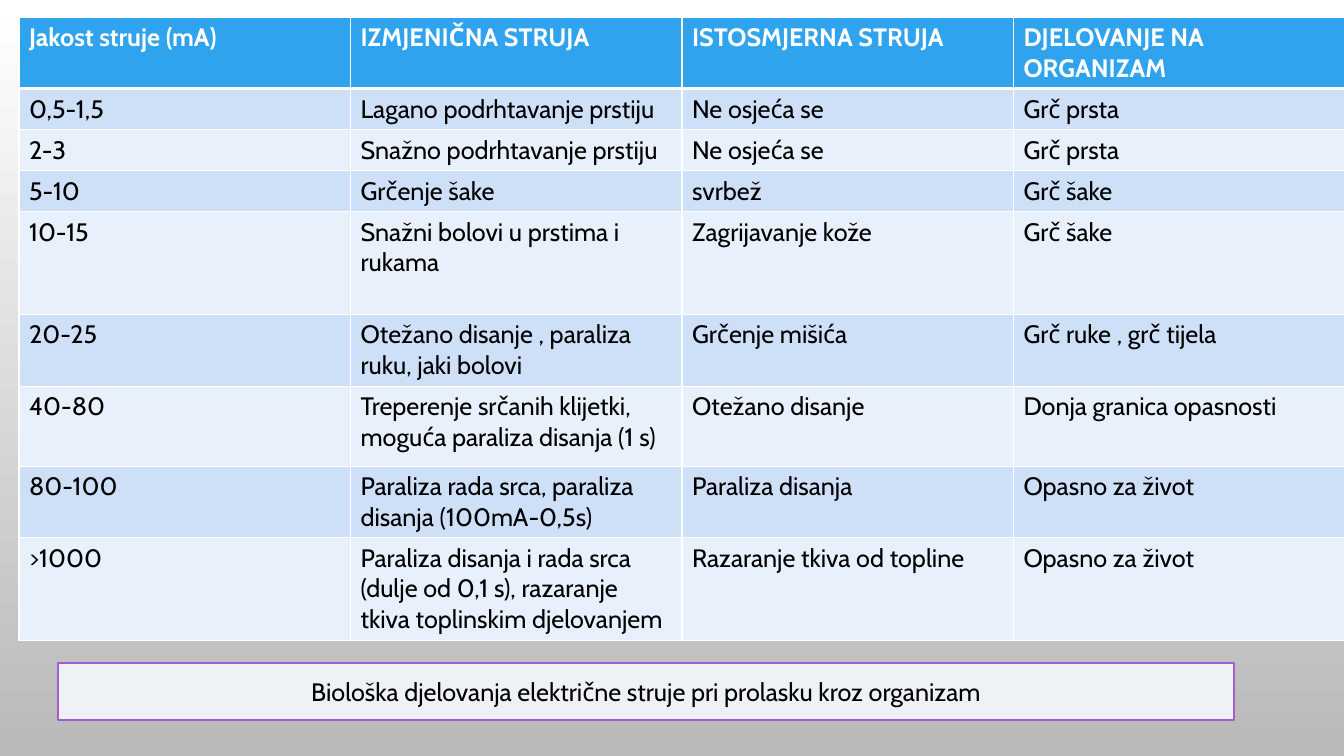
from lxml import etree
from pptx import Presentation
from pptx.dml.color import RGBColor
from pptx.enum.shapes import MSO_SHAPE
from pptx.enum.text import MSO_ANCHOR, PP_ALIGN
from pptx.oxml.ns import qn
from pptx.util import Pt

RECTANGLE = MSO_SHAPE.RECTANGLE
MIDDLE = MSO_ANCHOR.MIDDLE
CENTER = PP_ALIGN.CENTER

PX_PER_INCH = 100.8
FONT = "Cabin"
TEXT_PT = 18
COLORS = {
    "white": "FFFFFF",
    "grey": "B9B9B9",
    "header": "2FA3EE",
    "odd_row": "CDE0F8",
    "even_row": "E8F0FC",
    "caption": "EEF2F7",
    "outline": "A35DD1",
    "text": "000000",
}

HEADINGS = ("Jakost struje (mA)", "IZMJENIČNA STRUJA", "ISTOSMJERNA STRUJA",
            "DJELOVANJE NA ORGANIZAM")
EFFECTS = [
    ("0,5-1,5", "Lagano podrhtavanje prstiju", "Ne osjeća se", "Grč prsta"),
    ("2-3", "Snažno podrhtavanje prstiju", "Ne osjeća se", "Grč prsta"),
    ("5-10", "Grčenje šake", "svrbež", "Grč šake"),
    ("10-15", "Snažni bolovi u prstima i rukama", "Zagrijavanje kože", "Grč šake"),
    ("20-25", "Otežano disanje , paraliza ruku, jaki bolovi", "Grčenje mišića",
     "Grč ruke , grč tijela"),
    ("40-80", "Treperenje srčanih klijetki, moguća paraliza disanja (1 s)",
     "Otežano disanje", "Donja granica opasnosti"),
    ("80-100", "Paraliza rada srca, paraliza disanja (100mA-0,5s)",
     "Paraliza disanja", "Opasno za život"),
    (">1000", "Paraliza disanja i rada srca (dulje od 0,1 s), razaranje tkiva "
     "toplinskim djelovanjem", "Razaranje tkiva od topline", "Opasno za život"),
]
ROW_HEIGHTS = (70, 41, 41, 41, 103, 71, 80, 71, 103)
CAPTION = "Biološka djelovanja električne struje pri prolasku kroz organizam"


def px(n):
    return round(n * 914400 / PX_PER_INCH)


def color(name):
    return RGBColor.from_string(COLORS[name])


def add_run(p, text, color_name, bold=False):
    r = p.add_run()
    r.text = text
    r.font.name = FONT
    r.font.size = Pt(TEXT_PT)
    r.font.bold = bold
    r.font.color.rgb = color(color_name)


def set_borders(cell, widths):
    """Draw white cell borders; widths maps each side (L, R, T, B) to points."""
    tc_pr = cell._tc.get_or_add_tcPr()
    for side, width in widths.items():
        ln = etree.SubElement(tc_pr, qn(f"a:ln{side}"), w=str(Pt(width)))
        fill = etree.SubElement(ln, qn("a:solidFill"))
        etree.SubElement(fill, qn("a:srgbClr"), val=COLORS["white"])


def paint_background(slide):
    fill = slide.background.fill
    fill.gradient()
    fill.gradient_angle = 270
    for stop, position, name in zip(fill.gradient_stops, (0, 1), ("white", "grey")):
        stop.position = position
        stop.color.rgb = color(name)


def add_effects_table(slide, x, y, w):
    rows = [HEADINGS, *EFFECTS]
    table = slide.shapes.add_table(len(rows), len(HEADINGS), px(x), px(y), px(w),
                                   px(sum(ROW_HEIGHTS))).table
    for i, (texts, height) in enumerate(zip(rows, ROW_HEIGHTS)):
        table.rows[i].height = px(height)
        is_header = i == 0
        fill_name = "header" if is_header else "odd_row" if i % 2 else "even_row"
        widths = {"L": 1, "R": 1, "T": 3 if i == 1 else 1, "B": 3 if is_header else 1}
        for j, text in enumerate(texts):
            cell = table.cell(i, j)
            set_borders(cell, widths)
            cell.fill.solid()
            cell.fill.fore_color.rgb = color(fill_name)
            add_run(cell.text_frame.paragraphs[0], text,
                    "white" if is_header else "text", is_header)


def add_caption(slide, x, y, w, h):
    s = slide.shapes.add_shape(RECTANGLE, px(x), px(y), px(w), px(h))
    s.shadow.inherit = False
    s.fill.solid()
    s.fill.fore_color.rgb = color("caption")
    s.line.color.rgb = color("outline")
    s.line.width = Pt(1.25)
    tf = s.text_frame
    tf.word_wrap = True
    tf.vertical_anchor = MIDDLE
    p = tf.paragraphs[0]
    p.alignment = CENTER
    add_run(p, CAPTION, "text")


def main():
    prs = Presentation()
    prs.slide_width, prs.slide_height = px(1344), px(756)
    slide = prs.slides.add_slide(prs.slide_layouts[6])
    paint_background(slide)
    add_effects_table(slide, 19, 17, 1326)
    add_caption(slide, 58, 663, 1176, 57)
    prs.save("out.pptx")


if __name__ == "__main__":
    main()
